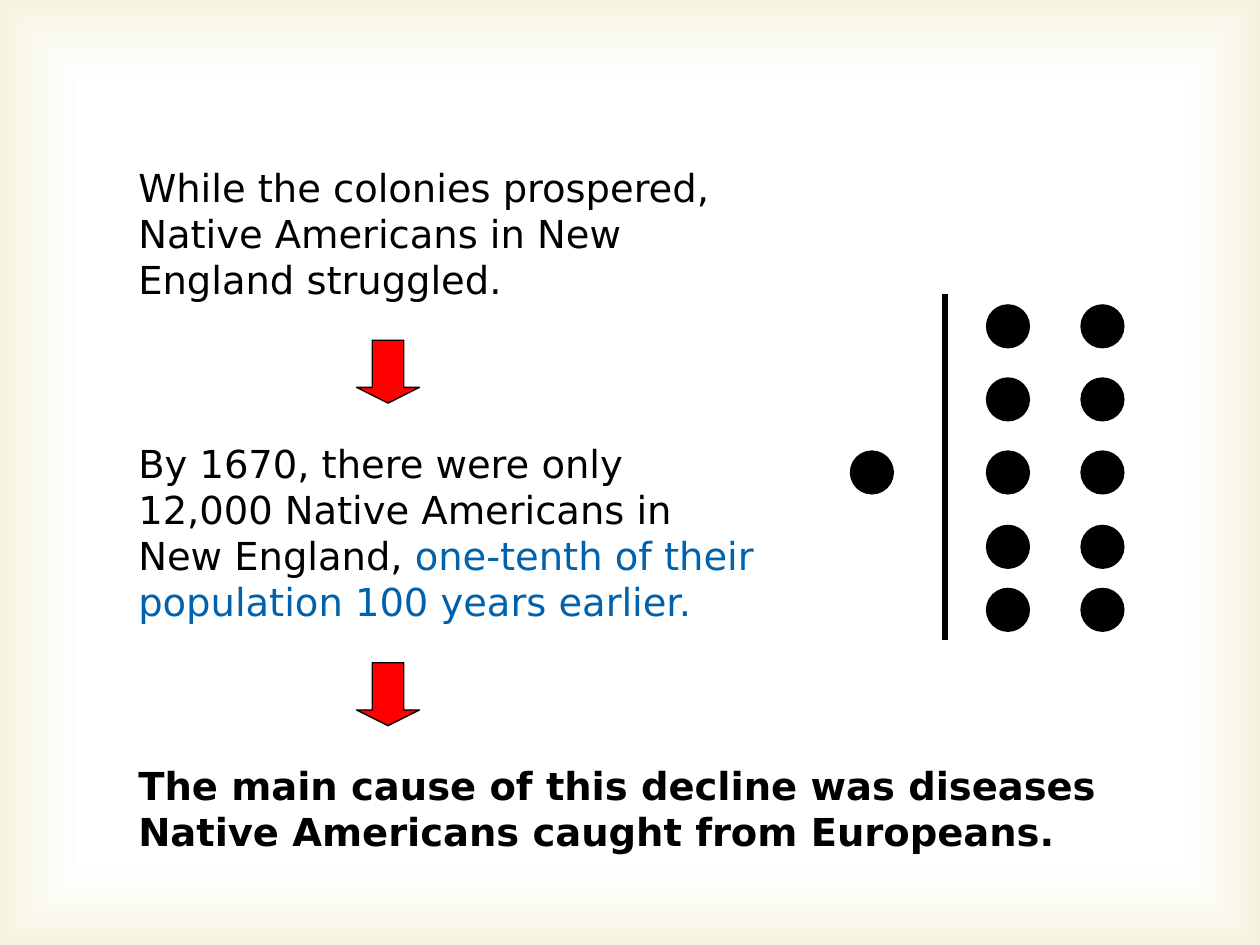
from typing import NamedTuple

from lxml.etree import SubElement
from pptx import Presentation
from pptx.dml.color import RGBColor
from pptx.enum.shapes import MSO_CONNECTOR, MSO_SHAPE
from pptx.enum.text import MSO_AUTO_SIZE
from pptx.oxml import parse_xml
from pptx.oxml.ns import nsdecls, qn
from pptx.util import Inches, Pt

HUES = {"black": "000000", "blue": "0062AC", "red": "FF0000",
        "white": "FFFFFF", "gold": "D1CA75"}
FONT = "DejaVu Sans"
DOT = 0.34


class Run(NamedTuple):
    text: str
    hue: str = "black"


class Note(NamedTuple):
    top: float
    width: float
    height: float
    runs: tuple[Run, ...]
    bold: bool = False


NOTES = (
    Note(1.25, 5.17, 1.21, (Run("While the colonies prospered, Native Americans "
                                "in New England struggled."),)),
    Note(3.44, 5.17, 1.58, (Run("By 1670, there were only 12,000 Native Americans "
                                "in New England, "),
                            Run("one-tenth of their population 100 years earlier.",
                                "blue"))),
    Note(6, 8, 0.83, (Run("The main cause of this decline was diseases Native "
                          "Americans caught from Europeans."),), True),
)


def color(name: str) -> RGBColor:
    return RGBColor.from_string(HUES[name])


def add_glow(slide, width: int, height: int) -> None:
    shape = slide.shapes.add_shape(MSO_SHAPE.RECTANGLE, 0, 0, width, height)
    shape.shadow.inherit = False
    shape.line.fill.background()
    stops = "".join(
        f'<a:gs pos="{pos}000"><a:srgbClr val="{HUES[hue]}">'
        f'<a:alpha val="{alpha}000"/></a:srgbClr></a:gs>'
        for pos, hue, alpha in ((83, "white", 11), (100, "gold", 23)))
    fill = parse_xml(
        f'<a:gradFill {nsdecls("a")} rotWithShape="1"><a:gsLst>{stops}</a:gsLst>'
        '<a:path path="rect"><a:fillToRect l="50000" t="50000" r="50000" b="50000"/>'
        '</a:path></a:gradFill>')
    shape._element.spPr.find(qn("a:prstGeom")).addnext(fill)


def add_note(slide, note: Note) -> None:
    box = slide.shapes.add_textbox(Inches(1), Inches(note.top),
                                   Inches(note.width), Inches(note.height))
    frame = box.text_frame
    frame.word_wrap = True
    frame.auto_size = MSO_AUTO_SIZE.SHAPE_TO_FIT_TEXT
    para = frame.paragraphs[0]
    para.font.name = FONT
    para.font.size = Pt(22)
    para.font.bold = note.bold
    for item in note.runs:
        run = para.add_run()
        run.text = item.text
        run.font.color.rgb = color(item.hue)


def add_mark(slide, kind: MSO_SHAPE, left: float, top: float,
             size: float, hue: str) -> None:
    shape = slide.shapes.add_shape(kind, Inches(left), Inches(top),
                                   Inches(size), Inches(size))
    shape.shadow.inherit = False
    shape.fill.solid()
    shape.fill.fore_color.rgb = color(hue)
    shape.line.color.rgb = color("black")
    shape.line.width = Pt(0.75)
    if kind == MSO_SHAPE.DOWN_ARROW:
        shape.adjustments[0] = 0.5
        shape.adjustments[1] = 0.25


def add_rule(slide, left: float, top: float, base: float) -> None:
    rule = slide.shapes.add_connector(MSO_CONNECTOR.STRAIGHT, Inches(left),
                                      Inches(top), Inches(left), Inches(base))
    rule.line.color.rgb = color("black")
    rule.line.width = Pt(3)
    SubElement(rule._element.spPr, qn("a:effectLst"))


def main() -> None:
    deck = Presentation()
    deck.slide_width = Inches(10)
    deck.slide_height = Inches(7.5)
    slide = deck.slides.add_slide(deck.slide_layouts[6])
    slide.background.fill.solid()
    slide.background.fill.fore_color.rgb = color("white")
    add_glow(slide, deck.slide_width, deck.slide_height)
    for note in NOTES:
        add_note(slide, note)
    add_rule(slide, 7.5, 2.33, 5.08)
    add_mark(slide, MSO_SHAPE.OVAL, 6.75, 3.58, DOT, "black")
    for left in (7.83, 8.58):
        for top in (2.42, 3, 3.58, 4.17, 4.67):
            add_mark(slide, MSO_SHAPE.OVAL, left, top, DOT, "black")
    for top in (2.7, 5.26):
        add_mark(slide, MSO_SHAPE.DOWN_ARROW, 2.83, top, 0.5, "red")
    deck.save("out.pptx")


if __name__ == "__main__":
    main()
